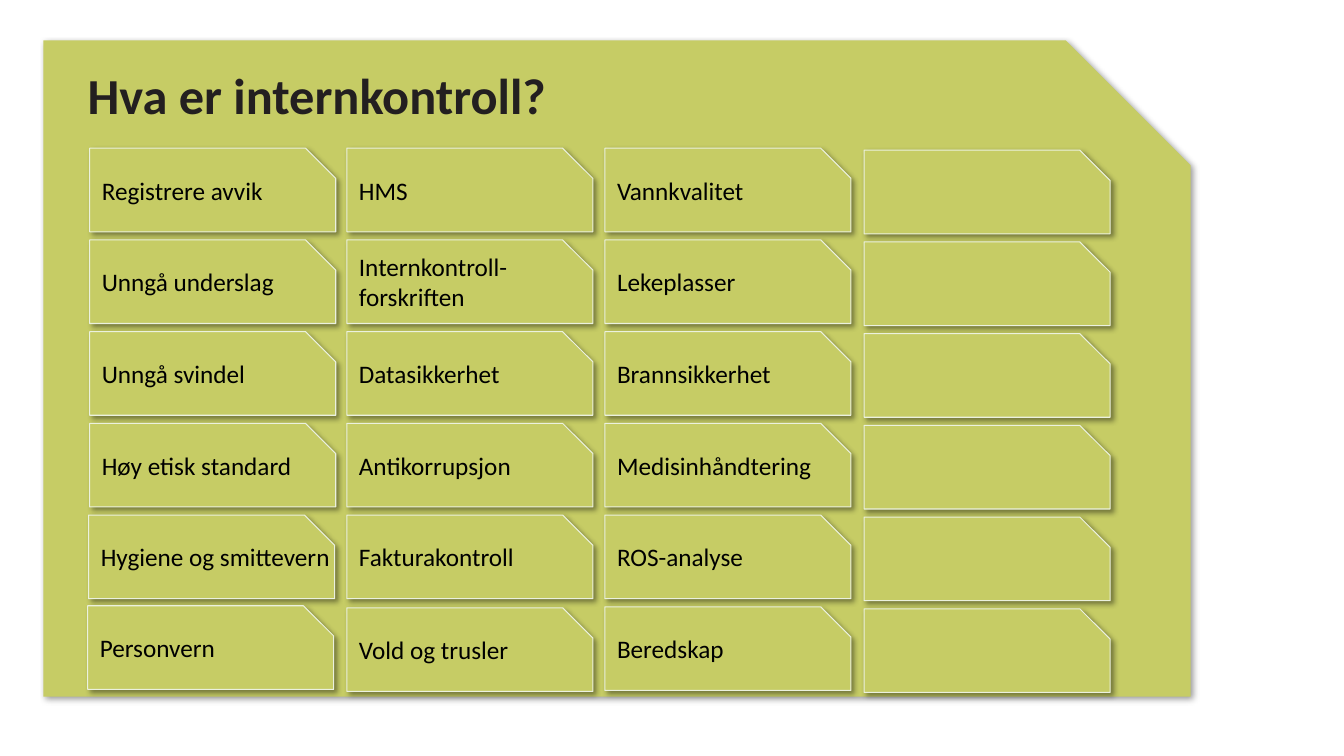
from lxml.etree import SubElement
from pptx import Presentation
from pptx.dml.color import RGBColor
from pptx.enum.text import MSO_ANCHOR as Anchor, MSO_AUTO_SIZE as AutoSize, PP_ALIGN as Align
from pptx.oxml.ns import qn
from pptx.util import Pt

SCALE = 9144
SLIDE_SIZE = (1333, 750)

TITLE = "Hva er internkontroll?"
COLUMNS = [
    ["Registrere avvik", "Unngå underslag", "Unngå svindel",
     "Høy etisk standard", "Hygiene og smittevern", "Personvern"],
    ["HMS", "Internkontroll-forskriften", "Datasikkerhet",
     "Antikorrupsjon", "Fakturakontroll", "Vold og trusler"],
    ["Vannkvalitet", "Lekeplasser", "Brannsikkerhet",
     "Medisinhåndtering", "ROS-analyse", "Beredskap"],
    [""] * 6,
]

GREEN, PALE, INK, BLACK = "C6CC65", "EBF1DE", "231F20", "000000"
PANEL = (43, 40, 1138, 651, 124)
TITLE_BOX = (86, 60, 982, 62)
COLUMN_ORIGINS = [(89, 147), (344, 147), (600, 147), (857, 149)]
ROW_PITCH = 91
CARD_SIZE = (244, 83, 30)
NUDGES = {(0, 4): (-1, 0), (0, 5): (-2, -1), (1, 5): (0, 1)}

TITLE_FORMAT = {"name": "Calibri", "size": Pt(36), "bold": True}
CARD_FORMAT = {"name": "Calibri", "size": Pt(18)}
TITLE_FRAME = {"word_wrap": True, "auto_size": AutoSize.SHAPE_TO_FIT_TEXT,
               "margin_left": SCALE, "margin_top": 4 * SCALE,
               "margin_right": 0, "margin_bottom": 0}
CARD_FRAME = {"word_wrap": True, "vertical_anchor": Anchor.MIDDLE,
              "margin_left": 12 * SCALE, "margin_top": 0,
              "margin_right": 0, "margin_bottom": 0}


def color(value):
    return RGBColor.from_string(value)


def set_all(target, values):
    for name, value in values.items():
        setattr(target, name, value)


def add_shadow(shape):
    shape.shadow.inherit = False
    effects = shape._element.spPr.find(qn("a:effectLst"))
    shadow = SubElement(effects, qn("a:outerShdw"), blurRad=str(Pt(4)), dist=str(Pt(3)),
                        dir="2700000", algn="tl", rotWithShape="0")
    shade = SubElement(shadow, qn("a:srgbClr"), val=BLACK)
    SubElement(shade, qn("a:alpha"), val="40000")


def add_cut_box(shapes, left, top, width, height, cut, line=None):
    right, bottom = left + width, top + height
    builder = shapes.build_freeform(right - cut, top, scale=SCALE)
    builder.add_line_segments([(left, top), (left, bottom), (right, bottom), (right, top + cut)])
    shape = builder.convert_to_shape()
    shape.fill.solid()
    shape.fill.fore_color.rgb = color(GREEN)
    if line:
        shape.line.color.rgb = color(line)
        shape.line.width = Pt(0.75)
    else:
        shape.line.fill.background()
    add_shadow(shape)
    return shape


def write(shape, text, frame_format, font_format, text_color):
    set_all(shape.text_frame, frame_format)
    paragraph = shape.text_frame.paragraphs[0]
    paragraph.alignment = Align.LEFT
    run = paragraph.add_run()
    run.text = text
    set_all(run.font, font_format)
    run.font.color.rgb = color(text_color)


def main():
    presentation = Presentation()
    presentation.slide_width, presentation.slide_height = [side * SCALE for side in SLIDE_SIZE]
    slide = presentation.slides.add_slide(presentation.slide_layouts[6])

    header = slide.shapes.add_group_shape()
    add_cut_box(header.shapes, *PANEL)
    title = header.shapes.add_textbox(*[length * SCALE for length in TITLE_BOX])
    write(title, TITLE, TITLE_FRAME, TITLE_FORMAT, INK)

    for column, (labels, (left, top)) in enumerate(zip(COLUMNS, COLUMN_ORIGINS)):
        for row, label in enumerate(labels):
            shift_x, shift_y = NUDGES.get((column, row), (0, 0))
            card = add_cut_box(slide.shapes, left + shift_x, top + row * ROW_PITCH + shift_y,
                               *CARD_SIZE, line=PALE)
            if label:
                write(card, label, CARD_FRAME, CARD_FORMAT, BLACK)

    presentation.save("out.pptx")


if __name__ == "__main__":
    main()
